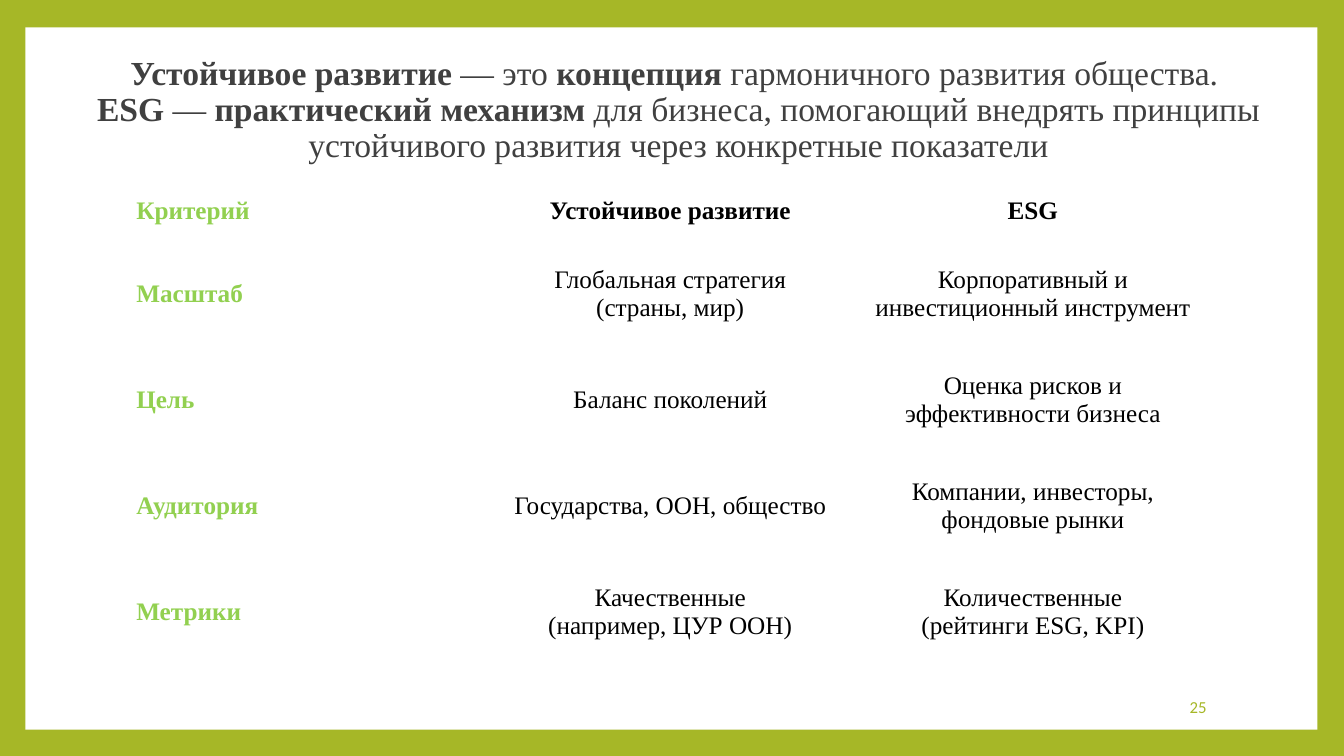
from dataclasses import dataclass

from pptx import Presentation
from pptx.dml.color import RGBColor as Color
from pptx.enum.shapes import MSO_SHAPE as Shape
from pptx.enum.text import MSO_ANCHOR as Anchor, MSO_AUTO_SIZE as AutoSize, PP_ALIGN as Align
from pptx.util import Cm, Pt


@dataclass(frozen=True)
class Theme:
    green: Color = Color.from_string("A6B727")
    label: Color = Color.from_string("92D050")
    dark: Color = Color.from_string("404040")
    black: Color = Color.from_string("000000")
    white: Color = Color.from_string("FFFFFF")
    font: str = "Times New Roman"
    number_font: str = "Calibri"
    title_size: int = 24
    table_size: int = 18
    number_size: int = 12


TITLE_LINES = [
    [("Устойчивое развитие", True), (" — это ", False), ("концепция", True),
     (" гармоничного развития общества. ", False)],
    [("ESG", True), (" — ", False), ("практический механизм", True),
     (" для бизнеса, помогающий внедрять принципы устойчивого развития "
      "через конкретные показатели", False)],
]

CRITERIA = [
    ("Критерий", "Устойчивое развитие", "ESG"),
    ("Масштаб", "Глобальная стратегия\n(страны, мир)",
     "Корпоративный и инвестиционный инструмент"),
    ("Цель", "Баланс поколений", "Оценка рисков и эффективности бизнеса"),
    ("Аудитория", "Государства, ООН, общество", "Компании, инвесторы, фондовые рынки"),
    ("Метрики", "Качественные\n(например, ЦУР ООН)", "Количественные\n(рейтинги ESG, KPI)"),
]


class SlideBuilder:
    def __init__(self, deck, theme):
        self.theme = theme
        self.slide = deck.slides.add_slide(deck.slide_layouts[5])
        fill = self.slide.background.fill
        fill.solid()
        fill.fore_color.rgb = theme.green

    def add_run(self, para, text, size, color, bold=False, font=None):
        span = para.add_run()
        span.text = text
        span.font.name = font or self.theme.font
        span.font.size = Pt(size)
        span.font.bold = bold
        span.font.color.rgb = color

    def panel(self, left, top, width, height):
        panel = self.slide.shapes.add_shape(
            Shape.RECTANGLE, Cm(left), Cm(top), Cm(width), Cm(height))
        panel.shadow.inherit = False
        panel.fill.solid()
        panel.fill.fore_color.rgb = self.theme.white
        panel.line.fill.background()
        self.slide.shapes.title.element.addprevious(panel.element)

    def title(self, lines, left, top, width, height):
        title = self.slide.shapes.title
        title.left, title.top, title.width, title.height = map(Cm, (left, top, width, height))
        frame = title.text_frame
        frame.auto_size = AutoSize.NONE
        frame.word_wrap = True
        frame.vertical_anchor = Anchor.MIDDLE
        frame.margin_bottom = Cm(1.06)
        para = frame.paragraphs[0]
        para.alignment = Align.CENTER
        para.line_spacing = 0.9
        for index, line in enumerate(lines):
            if index:
                para.add_line_break()
            for text, bold in line:
                self.add_run(para, text, self.theme.title_size, self.theme.dark, bold)

    def table(self, rows, left, top, column_width, header_height, row_height):
        columns = len(rows[0])
        table = self.slide.shapes.add_table(
            len(rows), columns, Cm(left), Cm(top), Cm(column_width * columns),
            Cm(header_height + row_height * (len(rows) - 1))).table
        table.first_row = table.horz_banding = False
        for column in table.columns:
            column.width = Cm(column_width)
        for r, texts in enumerate(rows):
            table.rows[r].height = Cm(row_height if r else header_height)
            for c, text in enumerate(texts):
                self.cell(table.cell(r, c), text, is_label=c == 0, is_header=r == 0)

    def cell(self, cell, text, is_label, is_header):
        cell.fill.background()
        cell.vertical_anchor = Anchor.MIDDLE
        frame = cell.text_frame
        for index, line in enumerate(text.split("\n")):
            para = frame.add_paragraph() if index else frame.paragraphs[0]
            para.alignment = Align.LEFT if is_label else Align.CENTER
            color = self.theme.label if is_label else self.theme.black
            self.add_run(para, line, self.theme.table_size, color, is_label or is_header)

    def page_number(self, text, left, top, width, height):
        box = self.slide.shapes.add_textbox(Cm(left), Cm(top), Cm(width), Cm(height))
        frame = box.text_frame
        frame.word_wrap = True
        frame.vertical_anchor = Anchor.MIDDLE
        para = frame.paragraphs[0]
        para.alignment = Align.RIGHT
        self.add_run(para, text, self.theme.number_size, self.theme.green,
                     font=self.theme.number_font)


def main():
    deck = Presentation()
    deck.slide_width, deck.slide_height = Cm(33.87), Cm(19.05)
    page = SlideBuilder(deck, Theme())
    page.panel(0.64, 0.69, 32.56, 17.7)
    page.title(TITLE_LINES, 1.57, 1.27, 31.06, 3.96)
    page.table(CRITERIA, left=3.18, top=4.55, column_width=9.14,
               header_height=1.52, row_height=2.67)
    page.page_number("25", 25.91, 17.3, 4.75, 1.02)
    deck.save("out.pptx")


if __name__ == "__main__":
    main()
